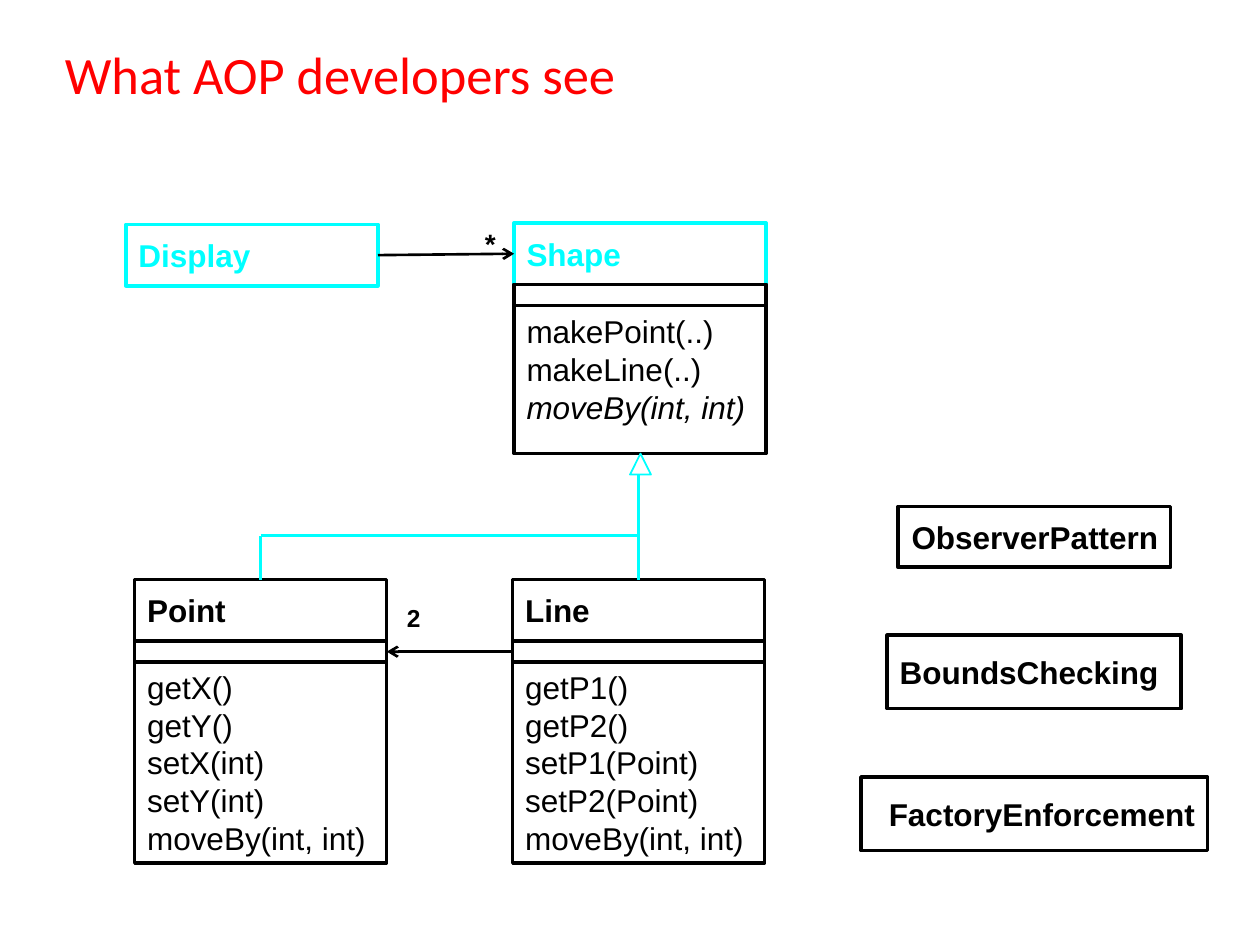
import lxml.etree
import pptx
import pptx.util
import pptx.dml.color
import pptx.enum.shapes
import pptx.enum.text
import pptx.oxml.ns

Pt = pptx.util.Pt
SHAPES = pptx.enum.shapes.MSO_SHAPE
ANCHOR = pptx.enum.text.MSO_ANCHOR
ALIGN = pptx.enum.text.PP_ALIGN
BLACK = pptx.dml.color.RGBColor(0, 0, 0)
WHITE = pptx.dml.color.RGBColor(255, 255, 255)
CYAN = pptx.dml.color.RGBColor(0, 255, 255)
RED = pptx.dml.color.RGBColor(255, 0, 0)
TOP, LEFT, RIGHT = 0, 1, 3


def write_text(shape, text, size=18, font="Arial", color=BLACK, bold=False,
               align=ALIGN.LEFT, anchor=ANCHOR.MIDDLE, wrap=False, italic_last=False):
    """Fill a shape with text, one paragraph per item when given a list."""
    frame = shape.text_frame
    frame.word_wrap = wrap
    frame.vertical_anchor = anchor
    items = [text] if isinstance(text, str) else text
    for index, item in enumerate(items):
        paragraph = frame.add_paragraph() if index else frame.paragraphs[0]
        paragraph.text = item
        paragraph.alignment = align
        for run in paragraph.runs:
            run.font.name = font
            run.font.size = Pt(size)
            run.font.bold = bold
            run.font.italic = italic_last and index == len(items) - 1
            run.font.color.rgb = color


def add_outline(shapes, left, top, width, height, color=BLACK, kind=SHAPES.RECTANGLE, weight=2):
    """Add an unfilled shape with a coloured outline."""
    shape = shapes.add_shape(kind, Pt(left), Pt(top), Pt(width), Pt(height))
    shape.shadow.inherit = False
    shape.fill.background()
    shape.line.color.rgb = color
    shape.line.width = Pt(weight)
    return shape


def add_label(slide, text, left, top, width, height, **text_format):
    """Add a plain text box."""
    label = slide.shapes.add_textbox(Pt(left), Pt(top), Pt(width), Pt(height))
    write_text(label, text, wrap=True, **text_format)


def add_name_box(slide, name, left, top, width, height, color=BLACK, align=ALIGN.LEFT):
    """Add a box that holds only a bold name."""
    box = add_outline(slide.shapes, left, top, width, height, color)
    write_text(box, name, color=color, bold=True, align=align)
    return box


def add_class_box(slide, name, methods, left, top, height, methods_offset=46.8,
                  name_color=BLACK, italic_last=False):
    """Add a grouped class with name, attribute and method compartments."""
    width, name_height, attributes_height = 144, 35.2, 12
    shapes = slide.shapes.add_group_shape().shapes
    header = add_outline(shapes, left, top, width, name_height, name_color)
    write_text(header, name, color=name_color, bold=True)
    body = add_outline(shapes, left, top + methods_offset, width, height - methods_offset)
    write_text(body, methods, italic_last=italic_last)
    attributes = add_outline(shapes, left, top + name_height, width, attributes_height)
    return header, attributes


def add_line(slide, start, end, color=BLACK, arrow=False):
    """Add a straight line between two points, with an optional open arrowhead."""
    line = slide.shapes.add_connector(
        pptx.enum.shapes.MSO_CONNECTOR.STRAIGHT, *(Pt(value) for value in (*start, *end)))
    line.line.color.rgb = color
    line.line.width = Pt(1.5)
    if arrow:
        lxml.etree.SubElement(line.line._get_or_add_ln(), pptx.oxml.ns.qn("a:tailEnd"), type="arrow")
    lxml.etree.SubElement(line._element.spPr, pptx.oxml.ns.qn("a:effectLst"))
    return line


def add_association(slide, source, source_side, target, target_side):
    """Join two boxes with an arrow."""
    line = add_line(slide, (0, 0), (0, 0), arrow=True)
    line.begin_connect(source, source_side)
    line.end_connect(target, target_side)


def add_inheritance(slide, children, bar_top, parent_x, parent_bottom):
    """Join child classes to their parent through a bar and a hollow triangle."""
    centers = [(child.left + child.width / 2) / Pt(1) for child in children]
    for child, center in zip(children, centers):
        stem = add_line(slide, (center, bar_top), (center, bar_top), CYAN)
        stem.begin_connect(child, TOP)
    add_line(slide, (centers[0], bar_top), (centers[-1], bar_top), CYAN)
    add_line(slide, (centers[-1], bar_top), (centers[-1], parent_bottom + 12), CYAN)
    triangle = add_outline(slide.shapes, parent_x - 6, parent_bottom, 12, 12,
                           CYAN, SHAPES.ISOSCELES_TRIANGLE, 1)
    triangle.fill.solid()
    triangle.fill.fore_color.rgb = WHITE


def add_class_diagram(slide, left, top):
    """Draw the classes and their relations from the given corner."""
    display = add_name_box(slide, "Display", left, top, 144, 35.2, CYAN)
    shape_header, _ = add_class_box(
        slide, "Shape", ["makePoint(..)\nmakeLine(..)", "moveBy(int, int)"],
        left + 221.8, top - 0.8, 131.8, 35.2, CYAN, True)
    point_header, point_attributes = add_class_box(
        slide, "Point", "getX()\ngetY()\nsetX(int)\nsetY(int)\nmoveBy(int, int)",
        left + 5, top + 203, 162)
    line_header, line_attributes = add_class_box(
        slide, "Line", "getP1()\ngetP2()\nsetP1(Point)\nsetP2(Point)\nmoveBy(int, int)",
        left + 221, top + 203, 162)
    add_inheritance(slide, [point_header, line_header], top + 177.8, left + 294, top + 131)
    add_association(slide, display, RIGHT, shape_header, LEFT)
    add_association(slide, line_attributes, LEFT, point_attributes, RIGHT)
    add_label(slide, "*", left + 198, top - 2.2, 24, 26.6, size=16, bold=True, anchor=ANCHOR.TOP)
    add_label(slide, "2", left + 153.4, top + 213.1, 24, 24, size=14, bold=True, anchor=ANCHOR.TOP)


def add_aspects(slide, left, top):
    """Draw the column of aspects from the given corner."""
    add_name_box(slide, "ObserverPattern", left + 21, top, 156, 34.6, align=ALIGN.RIGHT)
    add_name_box(slide, "BoundsChecking", left + 15, top + 73.5, 168, 42)
    add_name_box(slide, "FactoryEnforcement", left, top + 154.5, 198, 42, align=ALIGN.RIGHT)


def main():
    """Build and save the slide."""
    presentation = pptx.Presentation()
    presentation.slide_width, presentation.slide_height = Pt(720), Pt(540)
    slide = presentation.slides.add_slide(presentation.slide_layouts[6])
    add_label(slide, "What AOP developers see", 30, 24, 654, 36,
              size=30, font="Calibri", color=RED)
    add_class_diagram(slide, 72, 128.2)
    add_aspects(slide, 492, 289.5)
    presentation.save("out.pptx")


if __name__ == "__main__":
    main()
